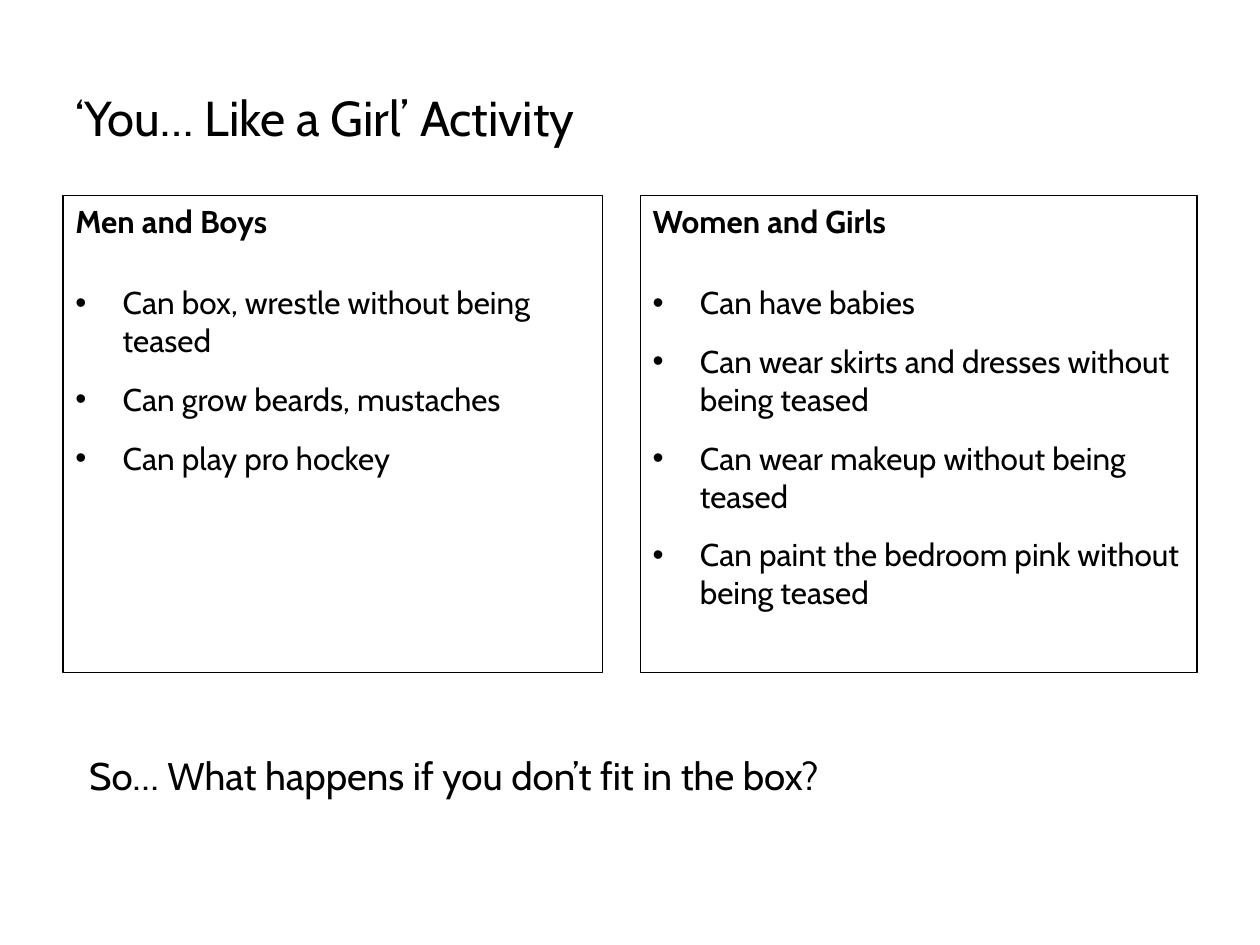
from lxml import etree
from pptx import Presentation
from pptx.dml.color import RGBColor
from pptx.enum import shapes, text
from pptx.oxml.ns import qn
from pptx.util import Pt

BLACK = RGBColor(0, 0, 0)
FONT = "Cabin"
LEFT, RIGHT = 36, 684
TOP, HIGH = 111.6, 272.9
INDENT = 27

MEN = [
    "Can box, wrestle without being teased",
    "Can grow beards, mustaches",
    "Can play pro hockey",
]
WOMEN = [
    "Can have babies",
    "Can wear skirts and dresses without being teased",
    "Can wear makeup without being teased",
    "Can paint the bedroom pink without being teased",
]


def write(para, words, size=18, bold=False, after=0):
    para.alignment = text.PP_ALIGN.LEFT
    para.space_after = Pt(after)
    run = para.add_run()
    run.text = words
    font = run.font
    font.name, font.size, font.bold = FONT, Pt(size), bold
    font.color.rgb = BLACK


def bullet(para):
    """Give the paragraph a hanging round bullet."""
    props = para._p.get_or_add_pPr()
    props.set("marL", str(Pt(INDENT)))
    props.set("indent", str(-Pt(INDENT)))
    etree.SubElement(props, qn("a:buFont"), typeface="Arial")
    etree.SubElement(props, qn("a:buChar"), char="•")


def label(slide, box, words, size, anchor):
    frame = slide.shapes.add_textbox(*map(Pt, box)).text_frame
    frame.word_wrap = True
    frame.vertical_anchor = anchor
    write(frame.paragraphs[0], words, size)


def panel(slide, box, head, items):
    rect = slide.shapes.add_shape(shapes.MSO_SHAPE.RECTANGLE, *map(Pt, box))
    rect.shadow.inherit = False
    rect.fill.background()
    rect.line.color.rgb = BLACK
    rect.line.width = Pt(0.75)
    frame = rect.text_frame
    frame.word_wrap = True
    frame.vertical_anchor = text.MSO_ANCHOR.TOP
    write(frame.paragraphs[0], head, bold=True, after=25.2)
    for item in items:
        para = frame.add_paragraph()
        write(para, item, after=12)
        bullet(para)


def main():
    deck = Presentation()
    deck.slide_width, deck.slide_height = Pt(720), Pt(540)
    slide = deck.slides.add_slide(deck.slide_layouts[6])
    wide, start = 308.2, 365.8
    label(slide, (LEFT, 21.6, RIGHT - LEFT, 90),
          "‘You… Like a Girl’ Activity", 28, text.MSO_ANCHOR.MIDDLE)
    panel(slide, (LEFT, TOP, wide, HIGH), "Men and Boys", MEN)
    panel(slide, (start, TOP, RIGHT - start, HIGH), "Women and Girls", WOMEN)
    label(slide, (43.9, 426.2, 600.5, 55.4),
          "So… What happens if you don’t fit in the box?", 22,
          text.MSO_ANCHOR.TOP)
    deck.save("out.pptx")


if __name__ == "__main__":
    main()
